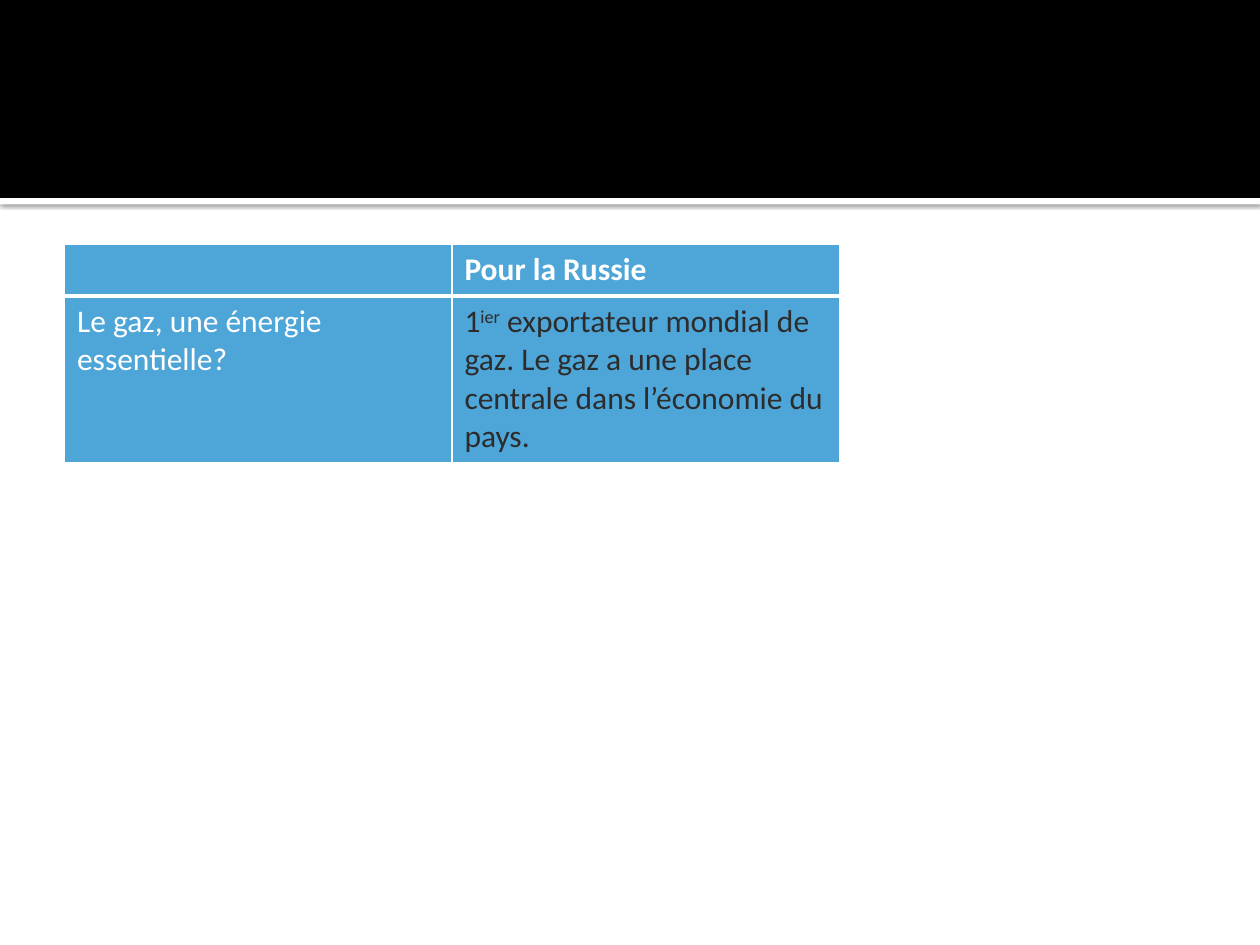
from lxml import etree
from pptx import Presentation, util as u
from pptx.dml.color import RGBColor
from pptx.enum import shapes
from pptx.oxml.ns import qn

COLORS = {"white": "FFFFFF", "black": "000000", "blue": "4EA5D8", "dark": "2C2C2C"}

# Each cell is a list of (text, format) runs.
ROWS = [
    [[], [("Pour la Russie", {"bold": True})]],
    [
        [("Le gaz, une énergie essentielle?", {})],
        [
            ("1", {"color": "dark"}),
            ("ier", {"color": "dark", "baseline": 30}),
            (" exportateur mondial de gaz. Le gaz a une place centrale "
             "dans l’économie du pays.", {"color": "dark"}),
        ],
    ],
]
ROW_HEIGHTS = [1.04, 3.3]
COLUMN_WIDTH = 7.81
TABLE_LEFT, TABLE_TOP = 1.3, 4.93
SLIDE_WIDTH, SLIDE_HEIGHT = 25.4, 19.05
BANNER_HEIGHT, STRIPE_HEIGHT = 3.99, 0.13


def rgb(name):
    return RGBColor.from_string(COLORS[name])


def add_band(slide, top, height, color):
    band = slide.shapes.add_shape(
        shapes.MSO_SHAPE.RECTANGLE, 0, u.Cm(top), u.Cm(SLIDE_WIDTH), u.Cm(height))
    band.fill.solid()
    band.fill.fore_color.rgb = rgb(color)
    band.line.fill.background()
    band.shadow.inherit = False
    return band


def add_drop_shadow(band):
    effects = band._element.spPr.find(qn("a:effectLst"))
    shadow = etree.SubElement(
        effects, qn("a:outerShdw"), blurRad=str(u.Pt(2.5)), dist=str(u.Pt(0.8)),
        dir="5400000", algn="tl", rotWithShape="0")
    color = etree.SubElement(shadow, qn("a:srgbClr"), val=COLORS["black"])
    etree.SubElement(color, qn("a:alpha"), val="60000")


def add_text(paragraph, text, size=18, color="white", bold=False, baseline=0):
    run = paragraph.add_run()
    run.text = text
    run.font.name = "Calibri"
    run.font.size = u.Pt(size)
    run.font.bold = bold
    run.font.color.rgb = rgb(color)
    if baseline:
        run._r.get_or_add_rPr().set("baseline", str(baseline * 1000))


def add_borders(cell, **widths):
    """Draw white borders; widths are points keyed by side: L, R, T, B."""
    properties = cell._tc.get_or_add_tcPr()
    for side, width in widths.items():
        line = etree.SubElement(properties, qn(f"a:ln{side}"), w=str(u.Pt(width)))
        fill = etree.SubElement(line, qn("a:solidFill"))
        etree.SubElement(fill, qn("a:srgbClr"), val=COLORS["white"])


def add_comparison_table(slide):
    columns = len(ROWS[0])
    table = slide.shapes.add_table(
        len(ROWS), columns, u.Cm(TABLE_LEFT), u.Cm(TABLE_TOP),
        u.Cm(COLUMN_WIDTH * columns), u.Cm(sum(ROW_HEIGHTS))).table
    for column in table.columns:
        column.width = u.Cm(COLUMN_WIDTH)
    for r, (contents, height) in enumerate(zip(ROWS, ROW_HEIGHTS)):
        table.rows[r].height = u.Cm(height)
        for c, runs in enumerate(contents):
            cell = table.cell(r, c)
            add_borders(cell, L=1, R=1, T=1 if r == 0 else 3, B=3 if r == 0 else 1)
            cell.fill.solid()
            cell.fill.fore_color.rgb = rgb("blue")
            for text, style in runs:
                add_text(cell.text_frame.paragraphs[0], text, **style)


def main():
    presentation = Presentation()
    presentation.slide_width = u.Cm(SLIDE_WIDTH)
    presentation.slide_height = u.Cm(SLIDE_HEIGHT)
    slide = presentation.slides.add_slide(presentation.slide_layouts[6])
    add_drop_shadow(add_band(slide, BANNER_HEIGHT, STRIPE_HEIGHT, "white"))
    add_band(slide, 0, BANNER_HEIGHT, "black")
    add_comparison_table(slide)
    presentation.save("out.pptx")


if __name__ == "__main__":
    main()
